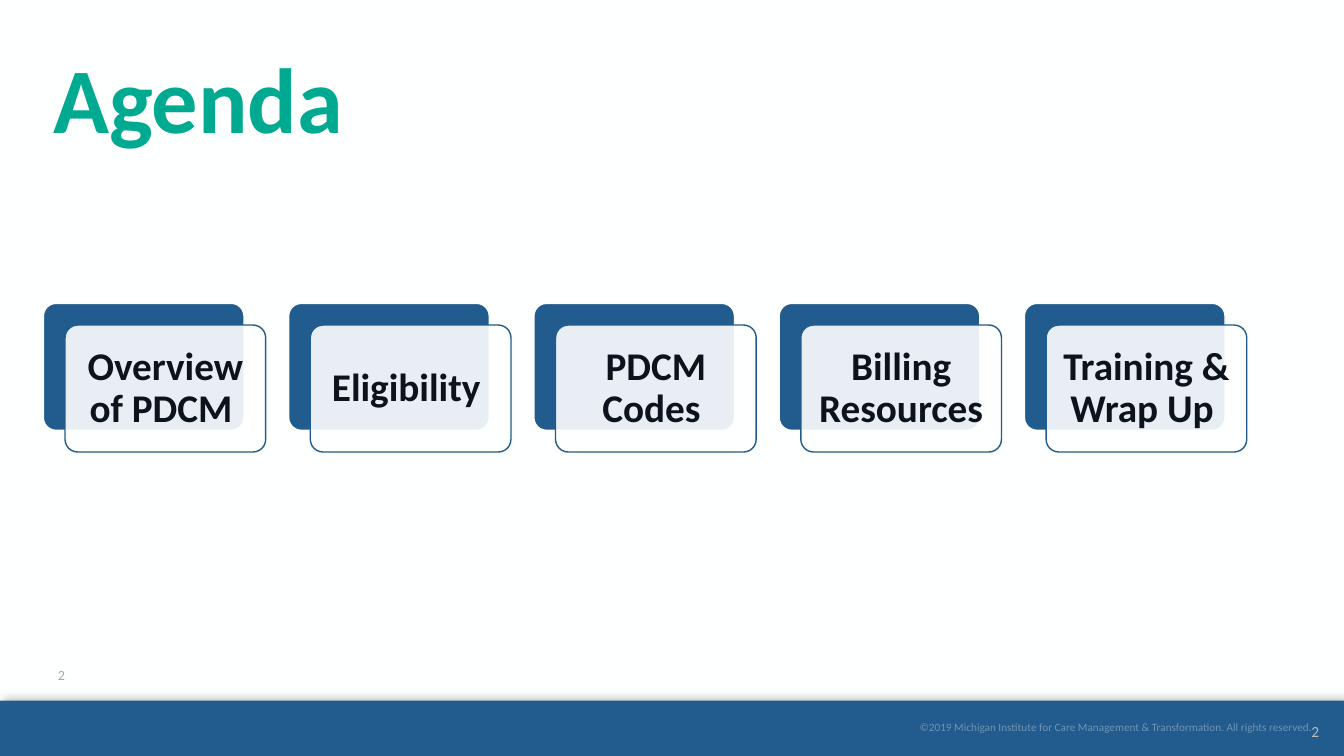
from lxml.etree import SubElement
from pptx import Presentation
from pptx.dml.color import RGBColor
from pptx.enum.shapes import MSO_SHAPE
from pptx.enum.text import MSO_ANCHOR, PP_ALIGN
from pptx.oxml import parse_xml
from pptx.oxml.ns import qn
from pptx.util import Inches, Pt

BLUE, WHITE, GREEN, INK = "225B8D", "FEFFFF", "00AA90", "0C131D"
TOPICS = ["Overview of PDCM ", "Eligibility ", "PDCM Codes ",
          "Billing Resources", "Training & Wrap Up "]
SHADOW = """
<a:effectLst xmlns:a="http://schemas.openxmlformats.org/drawingml/2006/main">
  <a:outerShdw blurRad="76200" dist="38100" dir="18900000" rotWithShape="0">
    <a:srgbClr val="000000"><a:alpha val="25000"/></a:srgbClr>
  </a:outerShdw>
</a:effectLst>"""


def paint(color, value, alpha=100):
    """Set a fill, line or font colour with its opacity in percent."""
    color.rgb = RGBColor.from_string(value)


def fade(props, alpha):
    """Give the solid fill inside props an opacity in percent."""
    tone = props.find(qn("a:solidFill")).find(qn("a:srgbClr"))
    SubElement(tone, qn("a:alpha")).set("val", str(alpha * 1000))


def write(shape, text, size, color, align=PP_ALIGN.CENTER, bold=False,
          pads=(0.1, 0.05, 0.1, 0.05), lead=1):
    frame = shape.text_frame
    frame.word_wrap = True
    frame.vertical_anchor = MSO_ANCHOR.MIDDLE
    (frame.margin_left, frame.margin_top,
     frame.margin_right, frame.margin_bottom) = map(Inches, pads)
    frame.text = text
    para = frame.paragraphs[0]
    para.alignment = align
    para.line_spacing = lead
    font = para.runs[0].font
    font.name, font.size, font.bold = "Calibri", Pt(size), bold
    paint(font.color, color)
    return font


def label(slide, box, text, size, color, **style):
    shape = slide.shapes.add_textbox(*map(Inches, box))
    return write(shape, text, size, color, **style)


def panel(slide, kind, box, fill, line=None):
    shape = slide.shapes.add_shape(kind, *map(Inches, box))
    shape.shadow.inherit = False
    shape.fill.solid()
    paint(shape.fill.fore_color, fill)
    if line:
        paint(shape.line.color, line)
        shape.line.width = Pt(1)
    else:
        shape.line.fill.background()
    return shape


def footer(slide, left, top, width, height):
    bar = panel(slide, MSO_SHAPE.RECTANGLE, (left, top, width, height), BLUE)
    props = bar.fill._xPr
    props.replace(props.find(qn("a:effectLst")), parse_xml(SHADOW))
    right = left + width
    font = label(slide, (right - 6.73, top + 0.13, 6.42, 0.27),
                 "©2019 Michigan Institute for Care Management & "
                 "Transformation. All rights reserved.", 8, WHITE,
                 align=PP_ALIGN.RIGHT, pads=(0.1, 0.05, 0, 0.05))
    fade(font._rPr, 35)
    label(slide, (left + 0.33, top - 0.45, 0.56, 0.4), "2", 10, "A8A8A8",
          pads=(0, 0.05, 0, 0.05))
    label(slide, (right - 0.53, top + 0.11, 0.49, 0.4), "2", 11, "BCBCBC")


def card(slide, left, top, width, height, text):
    """Draw a blue plate with a labelled pale plate offset over it."""
    shift = 0.215
    back = panel(slide, MSO_SHAPE.ROUNDED_RECTANGLE,
                 (left, top, width, height), BLUE, WHITE)
    front = panel(slide, MSO_SHAPE.ROUNDED_RECTANGLE,
                  (left + shift, top + shift, width, height), WHITE, BLUE)
    for plate in (back, front):
        plate.adjustments[0] = 0.1
    fade(front.fill._xPr, 90)
    write(front, text, 28, INK, bold=True, pads=(0.12,) * 4, lead=0.9)


def agenda(slide, left, top, width, height):
    """Spread the topic cards evenly over the given box."""
    step = (width - 1.99) / (len(TOPICS) - 1)
    for i, topic in enumerate(TOPICS):
        card(slide, left + i * step, top, 1.99, height, topic)


def main():
    deck = Presentation()
    deck.slide_width, deck.slide_height = Inches(13.33), Inches(7.5)
    slide = deck.slides.add_slide(deck.slide_layouts[6])
    back = slide.background.fill
    back.solid()
    paint(back.fore_color, WHITE)
    footer(slide, 0, 6.95, 13.33, 0.55)
    agenda(slide, 0.43, 3.01, 11.72, 1.26)
    label(slide, (0.43, 0.37, 10.23, 1.31), "Agenda", 66, GREEN,
          align=PP_ALIGN.LEFT, bold=True, lead=0.9)
    deck.save("out.pptx")


if __name__ == "__main__":
    main()
